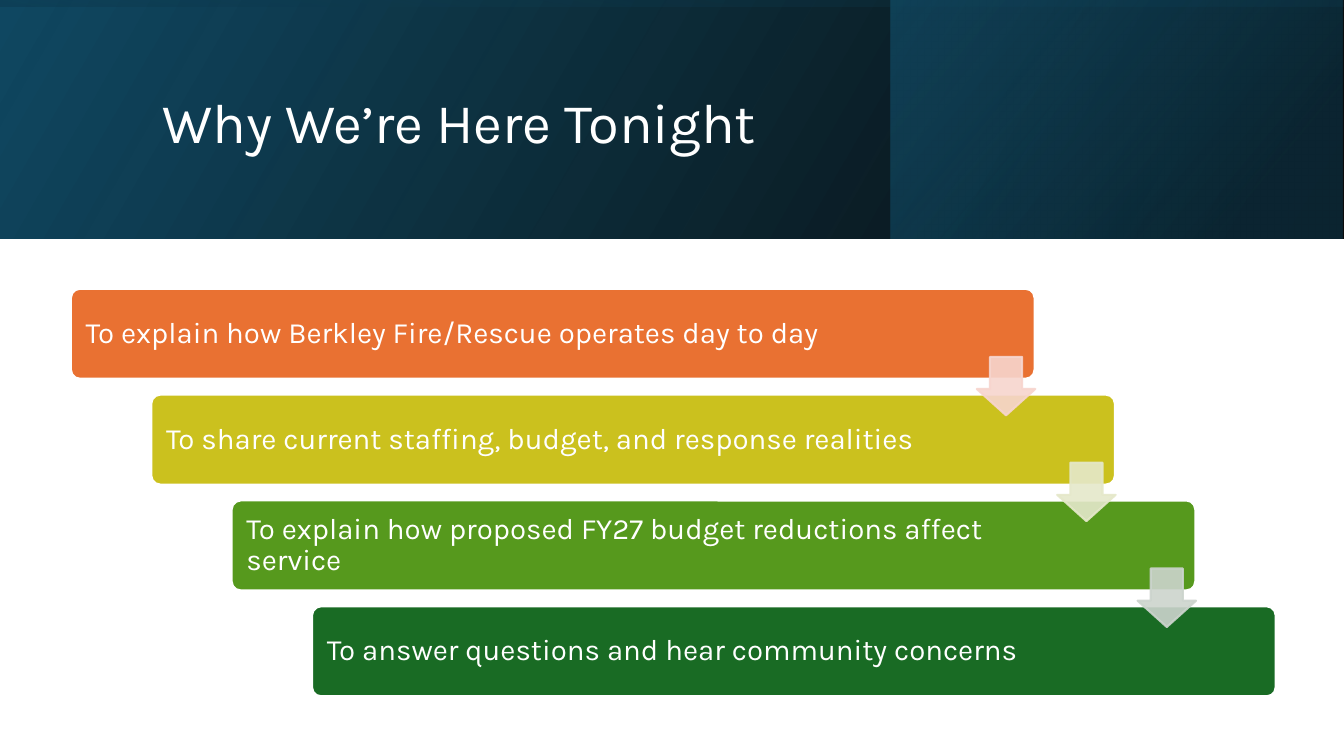
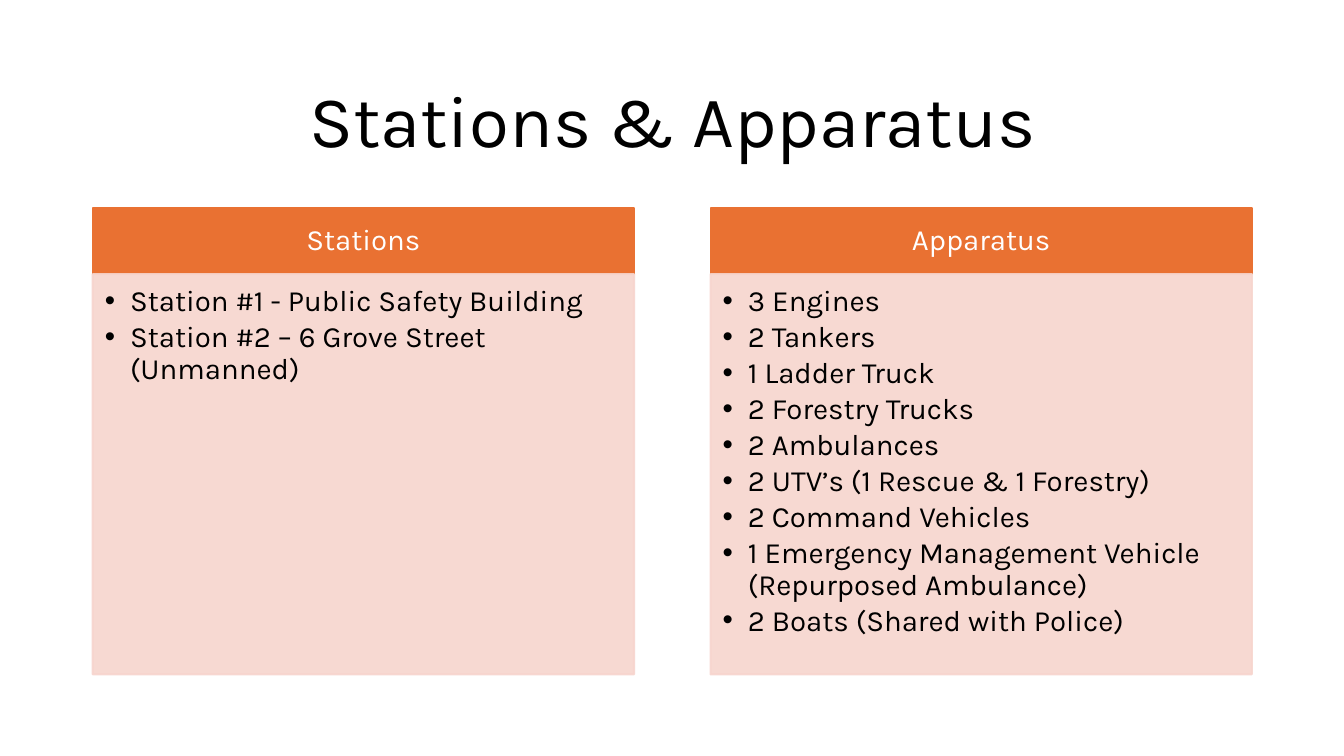
from dataclasses import dataclass

from lxml.etree import SubElement
from pptx import Presentation
from pptx.dml.color import RGBColor as RGB
from pptx.enum.shapes import MSO_SHAPE as SHAPE
from pptx.enum.text import MSO_ANCHOR as ANCHOR, MSO_AUTO_SIZE as AUTO_SIZE, PP_ALIGN as ALIGN
from pptx.oxml.ns import qn
from pptx.util import Inches, Pt


@dataclass(frozen=True)
class Theme:
    font: str = "Karla"
    banner_title_size: int = 40
    title_size: int = 52
    text_size: int = 21
    outline: float = 1.5
    white: str = "FFFFFF"
    black: str = "000000"
    navy: str = "104862"
    teal: str = "156082"
    deep_teal: str = "0B3041"
    orange: str = "E97132"
    mustard: str = "CBC11E"
    green: str = "56991D"
    forest: str = "196B24"
    pale_orange: str = "F7D5CE"
    pale_mustard: str = "E5E8CA"
    pale_green: str = "CCD4CD"


THEME = Theme()
TITLE_ONLY, COMPARISON = 5, 4


def write(frame, lines, *, size, color, align=ALIGN.LEFT, anchor=ANCHOR.MIDDLE,
          insets=(0.1, 0.05, 0.1, 0.05), bullet=None, space_after=0):
    """Fill a text frame; insets are inches in the order left, top, right, bottom."""
    frame.word_wrap = True
    frame.auto_size = AUTO_SIZE.NONE
    frame.vertical_anchor = anchor
    (frame.margin_left, frame.margin_top,
     frame.margin_right, frame.margin_bottom) = map(Inches, insets)
    for number, line in enumerate(lines):
        paragraph = frame.add_paragraph() if number else frame.paragraphs[0]
        paragraph.alignment = align
        paragraph.line_spacing = 0.9
        paragraph.space_before = Pt(0)
        paragraph.space_after = Pt(space_after)
        if bullet:
            properties = paragraph._p.get_or_add_pPr()
            properties.set("marL", str(Inches(0.25)))
            properties.set("indent", str(-Inches(0.25)))
            SubElement(properties, qn("a:buChar"), char=bullet)
        run = paragraph.add_run()
        run.text = line
        run.font.name = THEME.font
        run.font.size = Pt(size)
        run.font.bold = False
        run.font.color.rgb = RGB.from_string(color)


def set_opacity(shape, *percents):
    """Give the shape's colours, in document order, these opacities."""
    for color, percent in zip(shape._element.spPr.iter(qn("a:srgbClr")), percents):
        SubElement(color, qn("a:alpha"), val=str(percent * 1000))


class Deck:
    """Holds the presentation and the current slide; boxes are percent of the slide."""

    def __init__(self):
        self.show = Presentation()
        self.show.slide_width, self.show.slide_height = Inches(13.33), Inches(7.5)
        self.slide = None

    def new_slide(self, layout):
        self.slide = self.show.slides.add_slide(self.show.slide_layouts[layout])

    def area(self, left, top, width, height):
        across, down = self.show.slide_width / 100, self.show.slide_height / 100
        return [round(n) for n in (left * across, top * down, width * across, height * down)]

    def placeholder(self, index, box):
        holder = self.slide.placeholders[index]
        holder.left, holder.top, holder.width, holder.height = self.area(*box)
        return holder

    def title(self, text, box, **text_format):
        holder = self.placeholder(0, box)
        self.slide.shapes._spTree.append(holder._element)  # in front of the bands
        write(holder.text_frame, [text], **text_format)

    def paint(self, shape, fill, line, opacity=100):
        shape.fill.solid()
        shape.fill.fore_color.rgb = RGB.from_string(fill)
        shape.line.color.rgb = RGB.from_string(line)
        shape.line.width = Pt(THEME.outline)
        if opacity < 100:
            set_opacity(shape, opacity, opacity)

    def shape(self, kind, box, adjustments=()):
        shape = self.slide.shapes.add_shape(kind, *self.area(*box))
        shape.shadow.inherit = False
        for number, value in enumerate(adjustments):
            shape.adjustments[number] = value
        return shape

    def gradient_band(self, box, angle, *stops):
        """Each stop is (position, colour, opacity percent)."""
        band = self.shape(SHAPE.RECTANGLE, box)
        band.line.fill.background()
        band.fill.gradient()
        band.fill.gradient_angle = angle
        for stop, (position, color, _) in zip(band.fill.gradient_stops, stops):
            stop.position = position
            stop.color.rgb = RGB.from_string(color)
        set_opacity(band, *(opacity for _, _, opacity in stops))

    def step_bar(self, text, box, color):
        bar = self.shape(SHAPE.ROUNDED_RECTANGLE, box, [0.1])
        self.paint(bar, color, THEME.white)
        write(bar.text_frame, [text], size=THEME.text_size, color=THEME.white,
              insets=(0.12, 0.09, 1.4, 0.09))

    def step_arrow(self, box, color):
        self.paint(self.shape(SHAPE.DOWN_ARROW, box, [0.55, 0.45]), color, color, 90)

    def list_card(self, first_index, left, width, heading, items):
        header = self.placeholder(first_index, (left, 27.47, width, 8.8))
        self.paint(header, THEME.orange, THEME.orange)
        write(header.text_frame, [heading], size=THEME.text_size, color=THEME.white,
              align=ALIGN.CENTER, insets=(0.16, 0.09, 0.16, 0.09))
        body = self.placeholder(first_index + 1, (left, 36.27, width, 52.93))
        self.paint(body, THEME.pale_orange, THEME.pale_orange, 90)
        write(body.text_frame, items, size=THEME.text_size, color=THEME.black,
              anchor=ANCHOR.TOP, insets=(0.12, 0.12, 0.16, 0.18), bullet="•", space_after=3)


def purpose_slide(deck):
    deck.new_slide(TITLE_ONLY)
    banner = (0, 0, 100, 31.6)
    deck.gradient_band(banner, 330, (0, THEME.navy, 100), (1, THEME.black, 96))
    deck.gradient_band((66.3, 0, 33.6, 31.6), 320,
                       (0, THEME.teal, 48), (0.81, THEME.deep_teal, 68))
    deck.gradient_band(banner, 260, (0.23, THEME.navy, 16), (0.99, THEME.black, 45))
    deck.title("Why We’re Here Tonight", (11.33, 5.07, 79.73, 22.93),
               size=THEME.banner_title_size, color=THEME.white)
    steps = [
        ("To explain how Berkley Fire/Rescue operates day to day", THEME.orange),
        ("To share current staffing, budget, and response realities", THEME.mustard),
        ("To explain how proposed FY27 budget reductions affect service", THEME.green),
        ("To answer questions and hear community concerns", THEME.forest),
    ]
    shift, drop = 5.98, 14
    for step, (purpose, color) in enumerate(steps):
        deck.step_bar(purpose, (5.28 + step * shift, 38.2 + step * drop, 71.7, 11.9), color)
    for step, color in enumerate((THEME.pale_orange, THEME.pale_mustard, THEME.pale_green)):
        deck.step_arrow((72.68 + step * shift, 47.2 + step * drop, 4.35, 7.73), color)


def resources_slide(deck):
    deck.new_slide(COMPARISON)
    margin, content, card = 6.9, 86.25, 40.28
    deck.title("Stations & Apparatus", (margin, 8.13, content, 16.53),
               size=THEME.title_size, color=THEME.black, align=ALIGN.CENTER)
    deck.list_card(1, margin, card, "Stations", [
        "Station #1 - Public Safety Building",
        "Station #2 – 6 Grove Street (Unmanned)",
    ])
    deck.list_card(3, margin + content - card, card, "Apparatus", [
        "3 Engines",
        "2 Tankers",
        "1 Ladder Truck",
        "2 Forestry Trucks",
        "2 Ambulances",
        "2 UTV’s (1 Rescue & 1 Forestry)",
        "2 Command Vehicles",
        "1 Emergency Management Vehicle (Repurposed Ambulance)",
        "2 Boats (Shared with Police)",
    ])


def main():
    deck = Deck()
    purpose_slide(deck)
    resources_slide(deck)
    deck.show.save("out.pptx")


if __name__ == "__main__":
    main()
